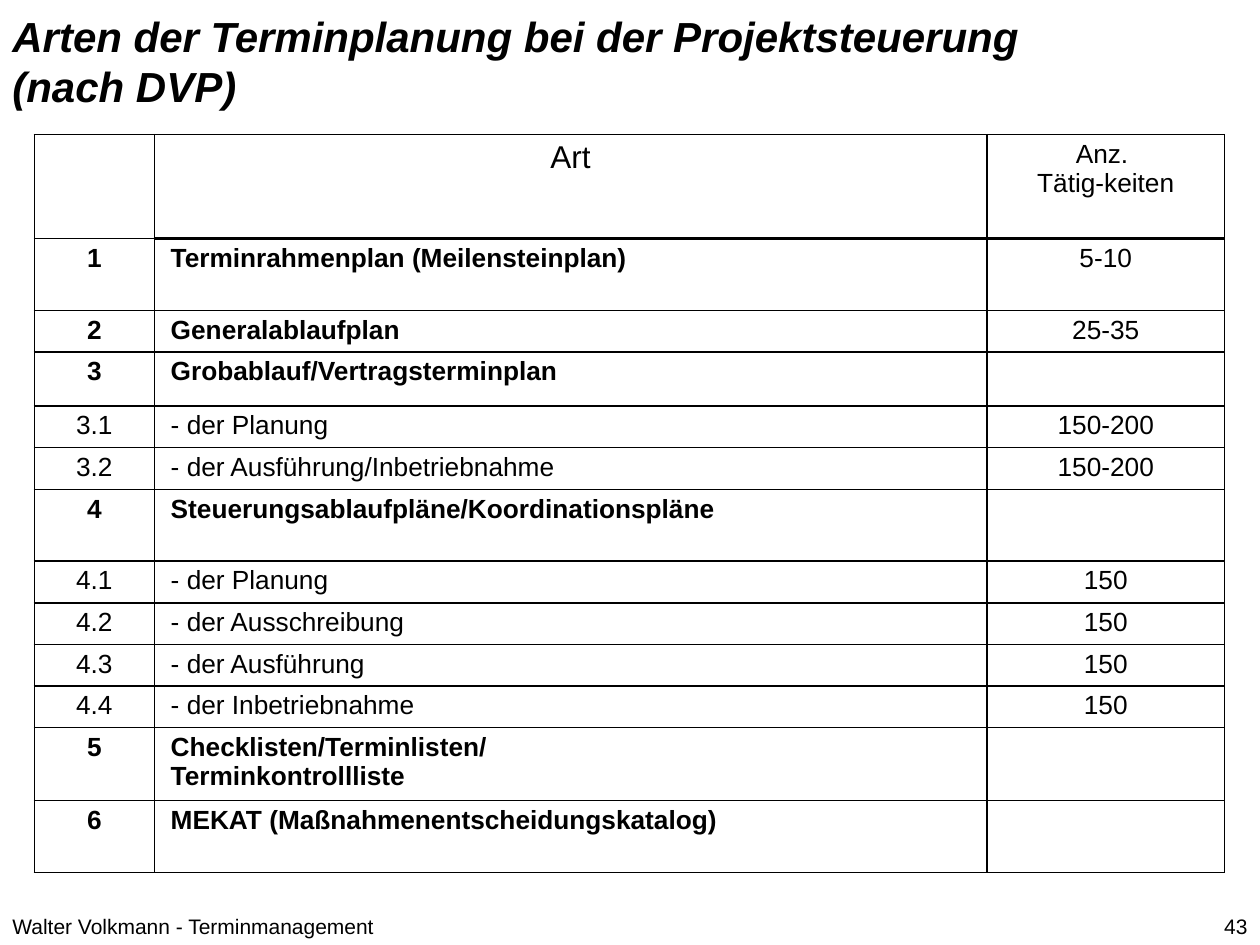
from lxml import etree
from pptx import Presentation
from pptx.dml.color import RGBColor
from pptx.enum.text import MSO_ANCHOR, PP_ALIGN
from pptx.oxml.ns import qn
from pptx.util import Pt

LEFT, MID, RIGHT = PP_ALIGN.LEFT, PP_ALIGN.CENTER, PP_ALIGN.RIGHT
TOP = MSO_ANCHOR.TOP
INK = {"text": "000000", "line": "000000"}
TALL, LOW, HEAD, STEP = 41.1, 23.4, 59.4, 30.9
COLS = [68.6, 475.7, 136]
ROWS = [
    (HEAD, "", "Art", "Anz. \vTätig-keiten"),
    (TALL, "1", "Terminrahmenplan (Meilensteinplan)", "5-10"),
    (LOW, "2", "Generalablaufplan", "25-35"),
    (STEP, "3", "Grobablauf/Vertragsterminplan", ""),
    (LOW, "3.1", "- der Planung", "150-200"),
    (LOW, "3.2", "- der Ausführung/Inbetriebnahme", "150-200"),
    (TALL, "4", "Steuerungsablaufpläne/Koordinationspläne", ""),
    (LOW, "4.1", "- der Planung", "150"),
    (LOW, "4.2", "- der Ausschreibung", "150"),
    (LOW, "4.3", "- der Ausführung", "150"),
    (LOW, "4.4", "- der Inbetriebnahme", "150"),
    (TALL, "5", "Checklisten/Terminlisten/\nTerminkontrollliste", ""),
    (TALL, "6", "MEKAT (Maßnahmenentscheidungskatalog)", ""),
]


class Deck:
    face = "Arial"

    def __init__(self, wide, high):
        self.prs = Presentation()
        self.prs.slide_width, self.prs.slide_height = Pt(wide), Pt(high)
        self.slide = self.prs.slides.add_slide(self.prs.slide_layouts[6])

    def style(self, frame, text, size, align=LEFT, bold=False, slant=False):
        frame.text = text
        for para in frame.paragraphs:
            para.alignment = align
            font = para.font
            font.name, font.size = self.face, Pt(size)
            font.bold, font.italic = bold, slant
            font.color.rgb = RGBColor.from_string(INK["text"])

    def text(self, place, text, size, align=LEFT, wrap=True, inset=3.6, **look):
        box = self.slide.shapes.add_textbox(*map(Pt, place))
        frame = box.text_frame
        frame.word_wrap = wrap
        frame.vertical_anchor = TOP
        frame.margin_top = Pt(inset)
        self.style(frame, text, size, align, **look)

    def edge(self, cell, side, width):
        line = etree.SubElement(cell._tc.get_or_add_tcPr(), qn(f"a:ln{side}"), w=str(Pt(width)))
        fill = etree.SubElement(line, qn("a:solidFill"))
        etree.SubElement(fill, qn("a:srgbClr"), val=INK["line"])

    def cell(self, cell, row, col, text, bold):
        cell.margin_left = cell.margin_right = Pt(9.4)
        cell.margin_top = cell.margin_bottom = Pt(2.88)
        cell.vertical_anchor = TOP
        thick = {(0, "B"), (1, "T")} if col else set()
        for side in "LRTB":
            self.edge(cell, side, 2 if (row, side) in thick else 1)
        cell.fill.background()
        size = 18 if (row, col) == (0, 1) else 15
        align = LEFT if row and col == 1 else MID
        self.style(cell.text_frame, text, size, align, bold)

    def table(self, left, top, cols, rows):
        high = sum(row[0] for row in rows)
        place = map(Pt, (left, top, sum(cols), high))
        grid = self.slide.shapes.add_table(len(rows), len(cols), *place).table
        grid.first_row = grid.horz_banding = False
        for col, wide in zip(grid.columns, cols):
            col.width = Pt(wide)
        for r, (tall, *texts) in enumerate(rows):
            grid.rows[r].height = Pt(tall)
            main = texts[0].isdigit()
            for c, text in enumerate(texts):
                self.cell(grid.cell(r, c), r, c, text, main and c < 2)


def main():
    deck = Deck(720, 540)
    title = "Arten der Terminplanung bei der Projektsteuerung \v(nach DVP)"
    deck.text((0, 0, 720, 65.5), title, 24, inset=6, bold=True, slant=True)
    deck.table(19.6, 77, COLS, ROWS)
    deck.text((0, 518.4, 222.5, 21.6), "Walter Volkmann - Terminmanagement", 12, wrap=False)
    deck.text((679.7, 518.4, 40.3, 21), "43", 12, RIGHT)
    deck.prs.save("out.pptx")


if __name__ == "__main__":
    main()
